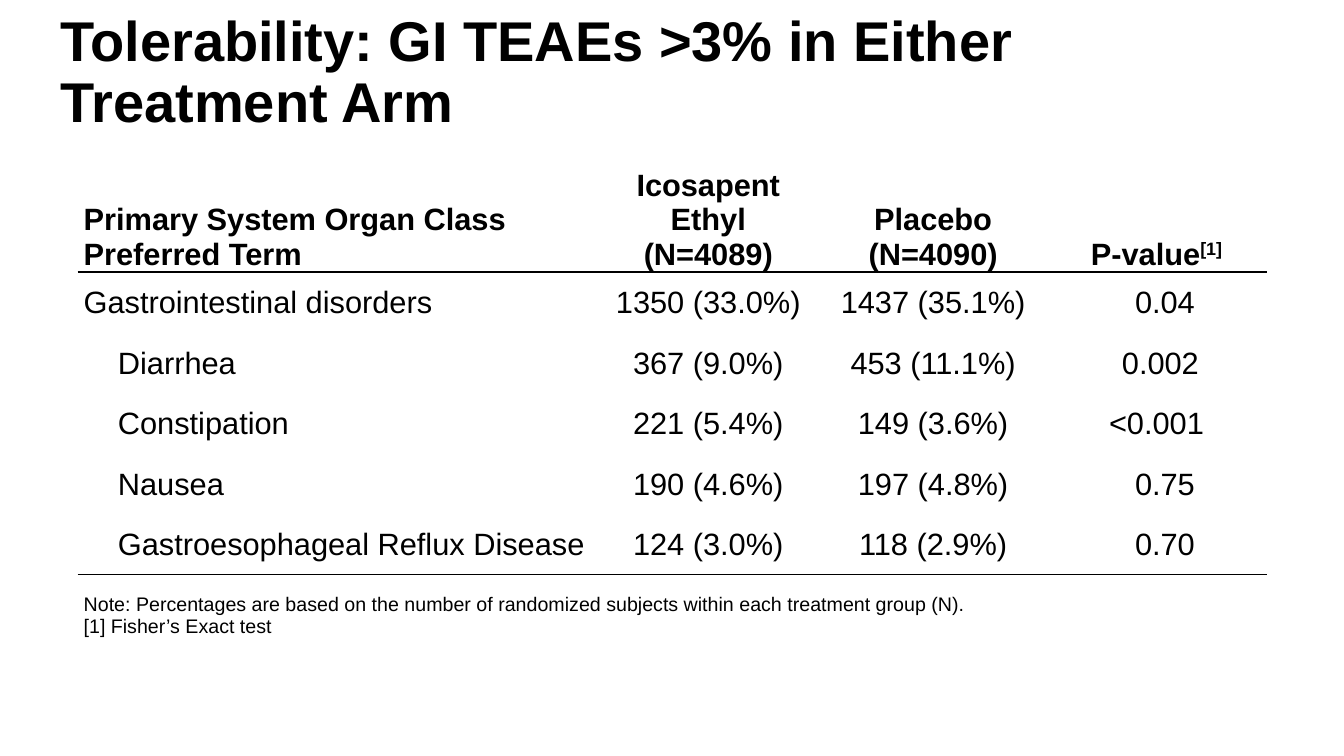
import lxml.etree
import pptx
import pptx.dml.color
import pptx.enum.text
import pptx.oxml
import pptx.oxml.ns
import pptx.util

Inches, Pt = pptx.util.Inches, pptx.util.Pt
PP_ALIGN = pptx.enum.text.PP_ALIGN
ANCHOR = pptx.enum.text.MSO_ANCHOR
BLACK = pptx.dml.color.RGBColor(0x00, 0x00, 0x00)
WHITE = pptx.dml.color.RGBColor(0xFF, 0xFF, 0xFF)
NO_STYLE = "{2D5ABB26-0587-4C30-8999-92F81FD0307C}"

INSET = 0.06
TERM_INDENT = 0.34
COLUMNS = [5.14, 2.23, 2.23, 2.2]
ROWS = [0.9] + [0.6] * 5 + [0.92]
HEADINGS = ["Primary System Organ Class\nPreferred Term", "Icosapent Ethyl\n(N=4089)",
            "Placebo\n(N=4090)", "P-value"]
EVENTS = [
    ("Gastrointestinal disorders", "1350 (33.0%)", "1437 (35.1%)", "0.04"),
    ("Diarrhea", "367 (9.0%)", "453 (11.1%)", "0.002"),
    ("Constipation", "221 (5.4%)", "149 (3.6%)", "<0.001"),
    ("Nausea", "190 (4.6%)", "197 (4.8%)", "0.75"),
    ("Gastroesophageal Reflux Disease", "124 (3.0%)", "118 (2.9%)", "0.70"),
]
P_VALUE_INDENTS = {"0.04": 0.17, "0.002": 0.08, "<0.001": 0, "0.75": 0.17, "0.70": 0.17}
NOTE = ("Note: Percentages are based on the number of randomized subjects within each "
        "treatment group (N).\n[1] Fisher’s Exact test")


def add_text(p, text, size=22, bold=False, align=PP_ALIGN.LEFT, line=1.0, after=0, baseline=0):
    """Append text to a paragraph, with line breaks at newlines."""
    p.alignment, p.line_spacing, p.space_after = align, line, Pt(after)
    p.space_before = Pt(0)
    for i, part in enumerate(text.split("\n")):
        if i:
            p.add_line_break()
        r = p.add_run()
        r.text = part
        r.font.name, r.font.size, r.font.bold = "Arial", Pt(size), bold
        r.font.color.rgb = BLACK
        if baseline:
            r._r.get_or_add_rPr().set("baseline", str(baseline * 1000))


def format_cell(cell, anchor, indent=0, top=0):
    """Set the fill, anchor and insets of a cell."""
    cell.fill.solid()
    cell.fill.fore_color.rgb = WHITE
    cell.vertical_anchor = anchor
    cell.margin_left, cell.margin_right = Inches(INSET + indent), Inches(INSET)
    cell.margin_top, cell.margin_bottom = Inches(top), Inches(0)


def add_rule(cell, width):
    """Draw a black line under a cell."""
    ln = pptx.oxml.parse_xml(
        f'<a:lnB {pptx.oxml.ns.nsdecls("a")} w="{Pt(width)}">'
        f'<a:solidFill><a:srgbClr val="{BLACK}"/></a:solidFill></a:lnB>')
    cell._tc.get_or_add_tcPr().insert(0, ln)


def add_title(s, x, y, w, h):
    """Place and format the title."""
    title = s.shapes.title
    title.left, title.top, title.width, title.height = map(Inches, (x, y, w, h))
    tf = title.text_frame
    tf.word_wrap, tf.vertical_anchor = True, ANCHOR.MIDDLE
    tf.auto_size = pptx.enum.text.MSO_AUTO_SIZE.NONE
    add_text(tf.paragraphs[0], "Tolerability: GI TEAEs >3% in Either\nTreatment Arm",
             size=40, bold=True, line=0.9)


def add_events_table(s, x, y):
    """Add the table of adverse events with its note row."""
    frame = s.shapes.add_table(len(ROWS), len(COLUMNS), Inches(x), Inches(y),
                               Inches(sum(COLUMNS)), Inches(sum(ROWS)))
    table = frame.table
    table.first_row = table.horz_banding = False
    table._tbl.tblPr.find(pptx.oxml.ns.qn("a:tableStyleId")).text = NO_STYLE
    for column, width in zip(table.columns, COLUMNS):
        column.width = Inches(width)
    for row, height in zip(table.rows, ROWS):
        row.height = Inches(height)

    for i, values in enumerate([HEADINGS] + EVENTS):
        for j, text in enumerate(values):
            cell = table.cell(i, j)
            p = cell.text_frame.paragraphs[0]
            align = PP_ALIGN.CENTER if j else PP_ALIGN.LEFT
            if i == 0:
                format_cell(cell, ANCHOR.BOTTOM)
                add_text(p, text, bold=True, align=align)
                add_rule(cell, 1.5)
            else:
                indent = TERM_INDENT if j == 0 and i > 1 else 0
                if j == 3:
                    indent = P_VALUE_INDENTS[text]
                format_cell(cell, ANCHOR.MIDDLE, indent)
                add_text(p, text, align=align, line=1.07)
            if i == len(EVENTS):
                add_rule(cell, 1)
    add_text(table.cell(0, 3).text_frame.paragraphs[0], "[1]", bold=True,
             align=PP_ALIGN.CENTER, baseline=30)

    note = table.cell(len(ROWS) - 1, 0)
    note.merge(table.cell(len(ROWS) - 1, len(COLUMNS) - 1))
    format_cell(note, ANCHOR.TOP, top=0.19)
    add_text(note.text_frame.paragraphs[0], NOTE, size=14)


def main():
    """Build and save the slide."""
    prs = pptx.Presentation()
    prs.slide_width, prs.slide_height = Inches(13.33), Inches(7.5)
    s = prs.slides.add_slide(prs.slide_layouts[5])
    add_title(s, 0.5, 0.01, 11.5, 1.45)
    add_events_table(s, 0.77, 1.67)
    prs.save("out.pptx")


if __name__ == "__main__":
    main()
